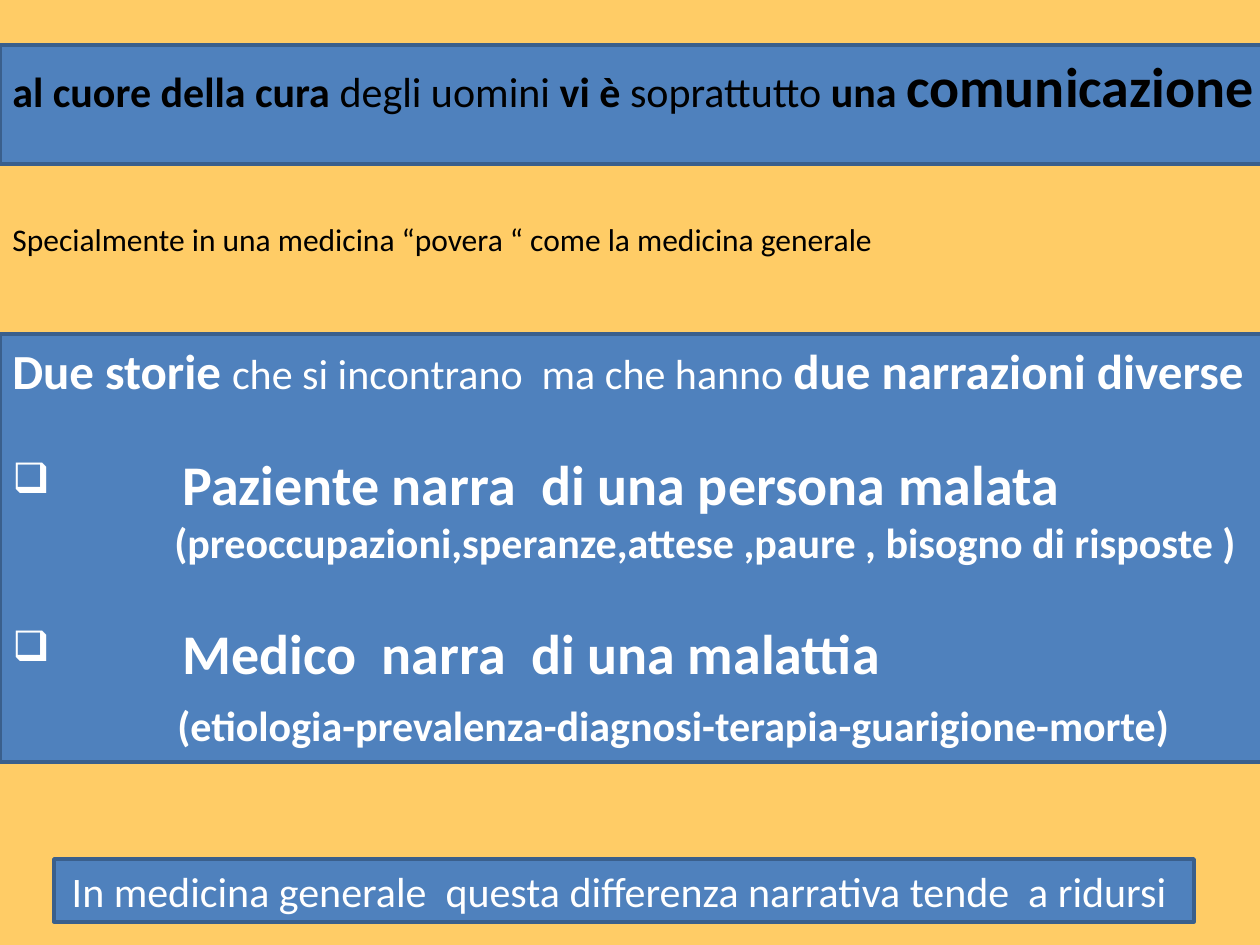
from lxml import etree
from pptx import Presentation
from pptx import util as u
from pptx.dml.color import RGBColor
from pptx.enum import shapes, text
from pptx.oxml.ns import qn

PX = 914400 / 126
THEME = {
    "bg": "FFCC66", "fill": "4F81BD", "line": "3A5F8C",
    "dark": "000000", "light": "FFFFFF", "font": "Calibri",
    "note": 18, "body": 24, "lead": 28, "key": 32,
}


def px(n):
    return u.Emu(round(n * PX))


def add_runs(p, runs, color):
    for words, size, bold in runs:
        r = p.add_run()
        r.text = words
        r.font.name = THEME["font"]
        r.font.size = u.Pt(THEME[size])
        r.font.bold = bold
        r.font.color.rgb = RGBColor.from_string(THEME[color])


prs = Presentation()
prs.slide_width, prs.slide_height = px(1260), px(945)
s = prs.slides.add_slide(prs.slide_layouts[6])
s.background.fill.solid()
s.background.fill.fore_color.rgb = RGBColor.from_string(THEME["bg"])

heading = [
    ("al cuore della cura ", "body", True),
    ("degli uomini ", "body", False),
    ("vi è", "body", True),
    (" soprattutto ", "body", False),
    ("una ", "body", True),
    ("comunicazione", "key", True),
]
stories = [
    ("Due storie ", "lead", True),
    ("che si incontrano  ma che hanno ", "body", False),
    ("due narrazioni diverse", "lead", True),
]
patient = [("Paziente narra  di una persona malata", "key", True)]
patient_detail = [("(preoccupazioni,speranze,attese ,paure , bisogno di risposte )", "body", True)]
doctor = [("Medico  narra  di una malattia", "key", True)]
doctor_detail = [("(etiologia-prevalenza-diagnosi-terapia-guarigione-morte)", "body", True)]
closing = [("In medicina generale  questa differenza narrativa tende  a ridursi ", "body", False)]
remark = [("Specialmente in una medicina “povera “ come la medicina generale", "note", False)]

LEFT, CENTER = text.PP_ALIGN.LEFT, text.PP_ALIGN.CENTER
blocks = [
    ((0, 45, 1279, 119), True, "dark", LEFT, [(heading, 0, 0, False)]),
    ((0, 334, 1285, 428), True, "light", LEFT, [
        (stories, 0, 0, False),
        (patient, 29, 170, True),
        (patient_detail, 0, 162, False),
        (doctor, 29, 170, True),
        (doctor_detail, 8, 165, False),
    ]),
    ((54, 859, 1140, 63), True, "light", CENTER, [(closing, 0, 0, False)]),
    ((0, 214, 903, 50), False, "dark", LEFT, [(remark, 0, 0, False)]),
]

for box, filled, color, align, paragraphs in blocks:
    place = [px(n) for n in box]
    if filled:
        sp = s.shapes.add_shape(shapes.MSO_SHAPE.RECTANGLE, *place)
        sp.shadow.inherit = False
        sp.fill.solid()
        sp.fill.fore_color.rgb = RGBColor.from_string(THEME["fill"])
        sp.line.color.rgb = RGBColor.from_string(THEME["line"])
        sp.line.width = u.Pt(2)
    else:
        sp = s.shapes.add_textbox(*place)
    tf = sp.text_frame
    tf.word_wrap = True
    tf.vertical_anchor = text.MSO_ANCHOR.TOP
    for i, (runs, gap, indent, bullet) in enumerate(paragraphs):
        p = tf.add_paragraph() if i else tf.paragraphs[0]
        p.alignment = align
        p.space_before = u.Pt(gap)
        add_runs(p, runs, color)
        pPr = p._p.get_or_add_pPr()
        pPr.set("marL", str(px(indent)))
        pPr.set("indent", str(px(-indent if bullet else 0)))
        if bullet:
            etree.SubElement(pPr, qn("a:buSzPct"), val="75000")
            etree.SubElement(pPr, qn("a:buChar"), char="❑")

prs.save("out.pptx")
